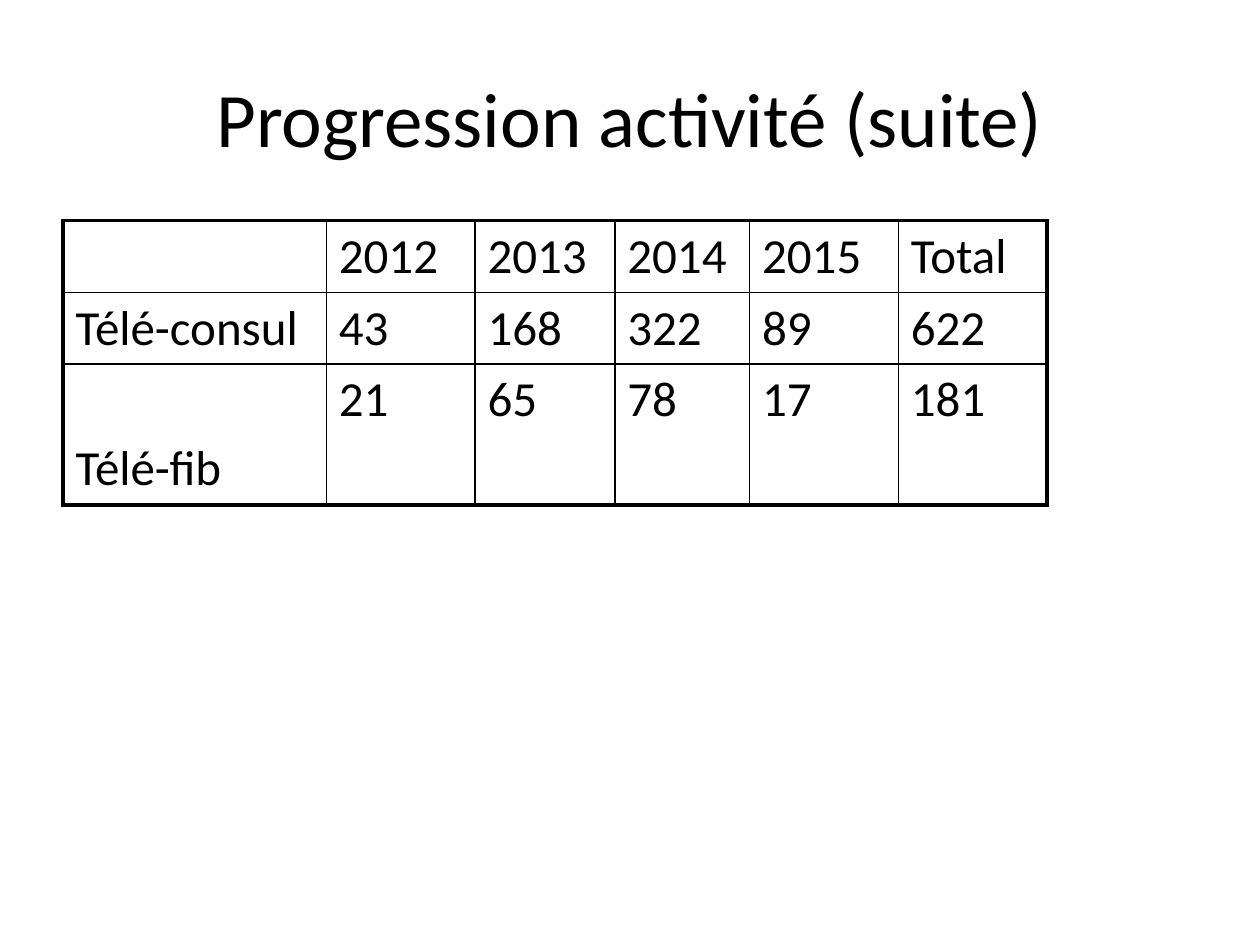
from lxml.etree import SubElement
from pptx import Presentation
from pptx.dml.color import RGBColor
from pptx.enum.text import MSO_ANCHOR as Anchor, PP_ALIGN as Align
from pptx.oxml.ns import qn
from pptx.util import Inches, Pt

COLORS = {"ink": "000000"}
TITLE_FORMAT = {"name": "Calibri", "size": Pt(44), "bold": False}
CELL_FORMAT = {"name": "Calibri", "size": Pt(28), "bold": False}
OUTER, INNER = Pt(2.25), Pt(1)

ROWS = [
    ["", "2012", "2013", "2014", "2015", "Total"],
    ["Télé-consul", "43", "168", "322", "89", "622"],
    ["Télé-fib", "21", "65", "78", "17", "181"],
]
COLUMN_WIDTHS = [2.09, 1.18, 1.11, 1.07, 1.18, 1.18]
ROW_HEIGHTS = [0.57, 0.57, 1.12]


def write(para, text, font_format):
    span = para.add_run()
    span.text = text
    for name, value in font_format.items():
        setattr(span.font, name, value)
    span.font.color.rgb = RGBColor.from_string(COLORS["ink"])


def add_title(page, text):
    box = page.shapes.add_textbox(Inches(0.5), Inches(0.3), Inches(9), Inches(1.25))
    frame = box.text_frame
    frame.word_wrap = True
    frame.vertical_anchor = Anchor.MIDDLE
    para = frame.paragraphs[0]
    para.alignment = Align.CENTER
    write(para, text, TITLE_FORMAT)


def set_borders(cell, widths):
    """Draw the cell's edges; widths maps L, R, T, B, in that order."""
    properties = cell._tc.get_or_add_tcPr()
    for position, (side, width) in enumerate(widths.items()):
        line = SubElement(properties, qn(f"a:ln{side}"), w=str(width))
        fill = SubElement(line, qn("a:solidFill"))
        SubElement(fill, qn("a:srgbClr"), val=COLORS["ink"])
        properties.insert(position, line)


def add_activity_table(page):
    last_row, last_column = len(ROWS) - 1, len(COLUMN_WIDTHS) - 1
    table = page.shapes.add_table(
        len(ROWS), len(COLUMN_WIDTHS), Inches(0.5), Inches(1.75),
        Inches(sum(COLUMN_WIDTHS)), Inches(sum(ROW_HEIGHTS)),
    ).table
    table.first_row = table.horz_banding = False
    for column, width in zip(table.columns, COLUMN_WIDTHS):
        column.width = Inches(width)
    for row, height in zip(table.rows, ROW_HEIGHTS):
        row.height = Inches(height)

    for r, values in enumerate(ROWS):
        for c, value in enumerate(values):
            cell = table.cell(r, c)
            cell.fill.background()
            if value:
                write(cell.text_frame.paragraphs[0], value, CELL_FORMAT)
            set_borders(cell, {
                "L": OUTER if c == 0 else INNER,
                "R": OUTER if c == last_column else INNER,
                "T": OUTER if r == 0 else INNER,
                "B": OUTER if r == last_row else INNER,
            })
    table.cell(last_row, 0).vertical_anchor = Anchor.BOTTOM


def main():
    deck = Presentation()
    deck.slide_width, deck.slide_height = Inches(10), Inches(7.5)
    page = deck.slides.add_slide(deck.slide_layouts[6])
    add_title(page, "Progression activité (suite)")
    add_activity_table(page)
    deck.save("out.pptx")


if __name__ == "__main__":
    main()
